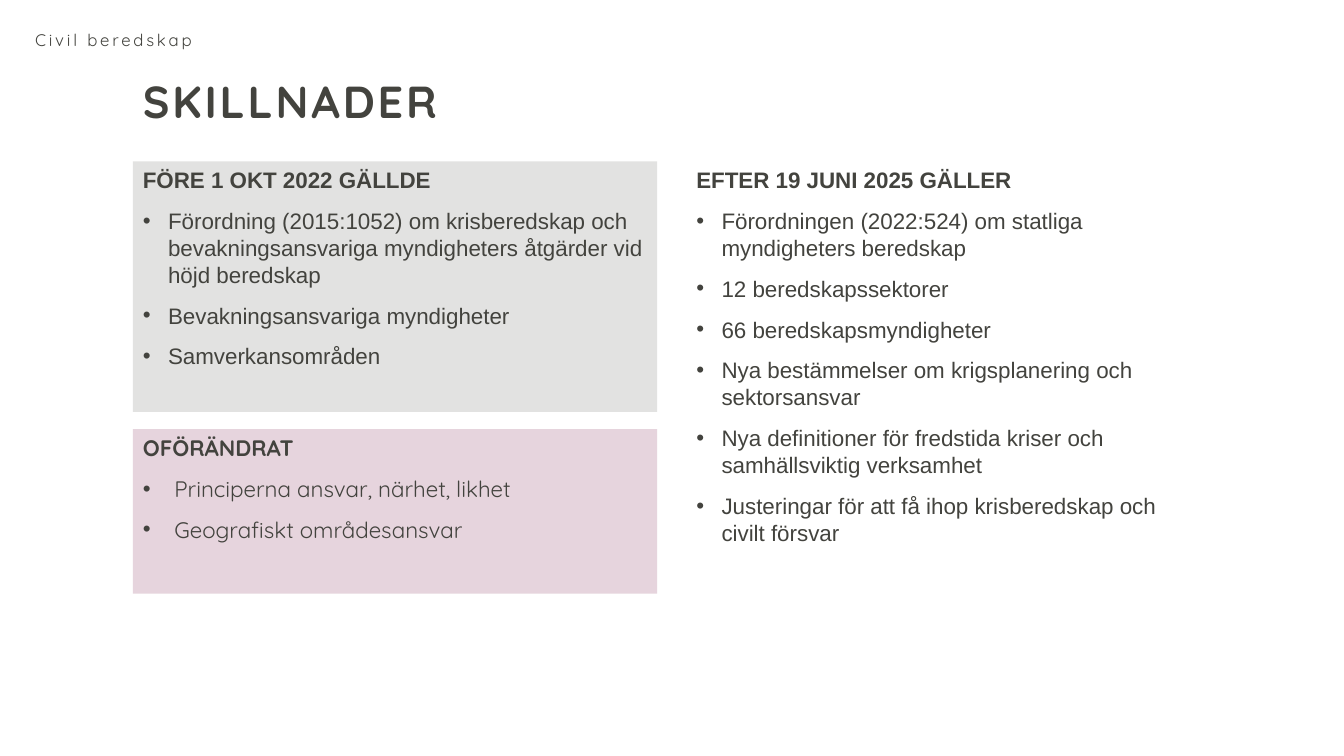
import dataclasses

import lxml.etree
import pptx
import pptx.dml.color
import pptx.enum.shapes
import pptx.enum.text
import pptx.oxml.ns
import pptx.util

Pt = pptx.util.Pt
RGBColor = pptx.dml.color.RGBColor
ANCHOR = pptx.enum.text.MSO_ANCHOR


@dataclasses.dataclass(frozen=True)
class Theme:
    text: str = "43433E"
    grey: str = "E2E2E1"
    pink: str = "E6D4DD"
    display_font: str = "Quicksand"
    body_font: str = "Arial"
    title_size: float = 32
    body_size: float = 16
    label_size: float = 12
    body_leading: float = 19.2
    body_gap: float = 10
    letter_spacing: float = 2


THEME = Theme()


def format_runs(p, font, size, bold=False, spacing=0):
    for r in p.runs:
        r.font.name = font
        r.font.size = Pt(size)
        r.font.bold = bold
        r.font.color.rgb = RGBColor.from_string(THEME.text)
        if spacing:
            r.font._element.set("spc", str(round(spacing * 100)))


def add_bullet(p, indent):
    pPr = p._p.get_or_add_pPr()
    pPr.set("marL", str(Pt(indent)))
    pPr.set("indent", str(-Pt(indent)))
    qn = pptx.oxml.ns.qn
    lxml.etree.SubElement(pPr, qn("a:buFont")).set("typeface", "Arial")
    lxml.etree.SubElement(pPr, qn("a:buChar")).set("char", "•")


def set_frame(tf, anchor):
    tf.word_wrap = True
    tf.vertical_anchor = anchor
    tf.margin_left = tf.margin_right = Pt(7.2)
    tf.margin_top = tf.margin_bottom = Pt(3.6)


# A single spaced-out line: the section label or the slide title
def add_line(slide, box, text, size, bold=False, anchor=ANCHOR.MIDDLE, leading=1.0):
    sp = slide.shapes.add_textbox(*map(Pt, box))
    set_frame(sp.text_frame, anchor)
    p = sp.text_frame.paragraphs[0]
    p.text = text
    p.line_spacing = leading
    format_runs(p, THEME.display_font, size, bold, THEME.letter_spacing)


# A panel with a bold heading above a bulleted list
def add_panel(slide, box, heading, items, fill=None, font=THEME.body_font, indent=18):
    if fill:
        sp = slide.shapes.add_shape(pptx.enum.shapes.MSO_SHAPE.RECTANGLE, *map(Pt, box))
        sp.shadow.inherit = False
        sp.fill.solid()
        sp.fill.fore_color.rgb = RGBColor.from_string(fill)
        sp.line.fill.background()
    else:
        sp = slide.shapes.add_textbox(*map(Pt, box))
    tf = sp.text_frame
    set_frame(tf, ANCHOR.TOP)
    for i, text in enumerate([heading, *items]):
        p = tf.add_paragraph() if i else tf.paragraphs[0]
        p.text = text
        p.alignment = pptx.enum.text.PP_ALIGN.LEFT
        p.line_spacing = Pt(THEME.body_leading)
        if i:
            p.space_before = Pt(THEME.body_gap)
            add_bullet(p, indent)
        format_runs(p, font, THEME.body_size, bold=i == 0)


# Two columns: before and unchanged on the left, after on the right
def add_comparison(slide, box):
    left, top, width, height = box
    gutter, before_height, unchanged_height, gap = 20.9, 179, 117.4, 12.4
    column = (width - gutter) / 2
    add_panel(slide, (left, top, column, before_height), "FÖRE 1 OKT 2022 GÄLLDE", [
        "Förordning (2015:1052) om krisberedskap och bevakningsansvariga "
        "myndigheters åtgärder vid höjd beredskap",
        "Bevakningsansvariga myndigheter",
        "Samverkansområden",
    ], fill=THEME.grey)
    add_panel(slide, (left + column + gutter, top, column, height), "EFTER 19 JUNI 2025 GÄLLER", [
        "Förordningen (2022:524) om statliga myndigheters beredskap",
        "12 beredskapssektorer",
        "66 beredskapsmyndigheter",
        "Nya bestämmelser om krigsplanering och sektorsansvar",
        "Nya definitioner för fredstida kriser och samhällsviktig verksamhet",
        "Justeringar för att få ihop krisberedskap och civilt försvar",
    ])
    add_panel(slide, (left, top + before_height + gap, column, unchanged_height), "OFÖRÄNDRAT", [
        "Principerna ansvar, närhet, likhet",
        "Geografiskt områdesansvar",
    ], fill=THEME.pink, font=THEME.display_font, indent=22.5)


def main():
    prs = pptx.Presentation()
    prs.slide_width, prs.slide_height = Pt(960), Pt(540)
    slide = prs.slides.add_slide(prs.slide_layouts[6])
    add_line(slide, (95, 53.3, 769.7, 40.3), "SKILLNADER", THEME.title_size,
             bold=True, anchor=ANCHOR.TOP, leading=0.9)
    add_line(slide, (18, 18, 606, 21.6), "Civil beredskap", THEME.label_size)
    add_comparison(slide, (95, 115.2, 769.7, 323.3))
    prs.save("out.pptx")


if __name__ == "__main__":
    main()
